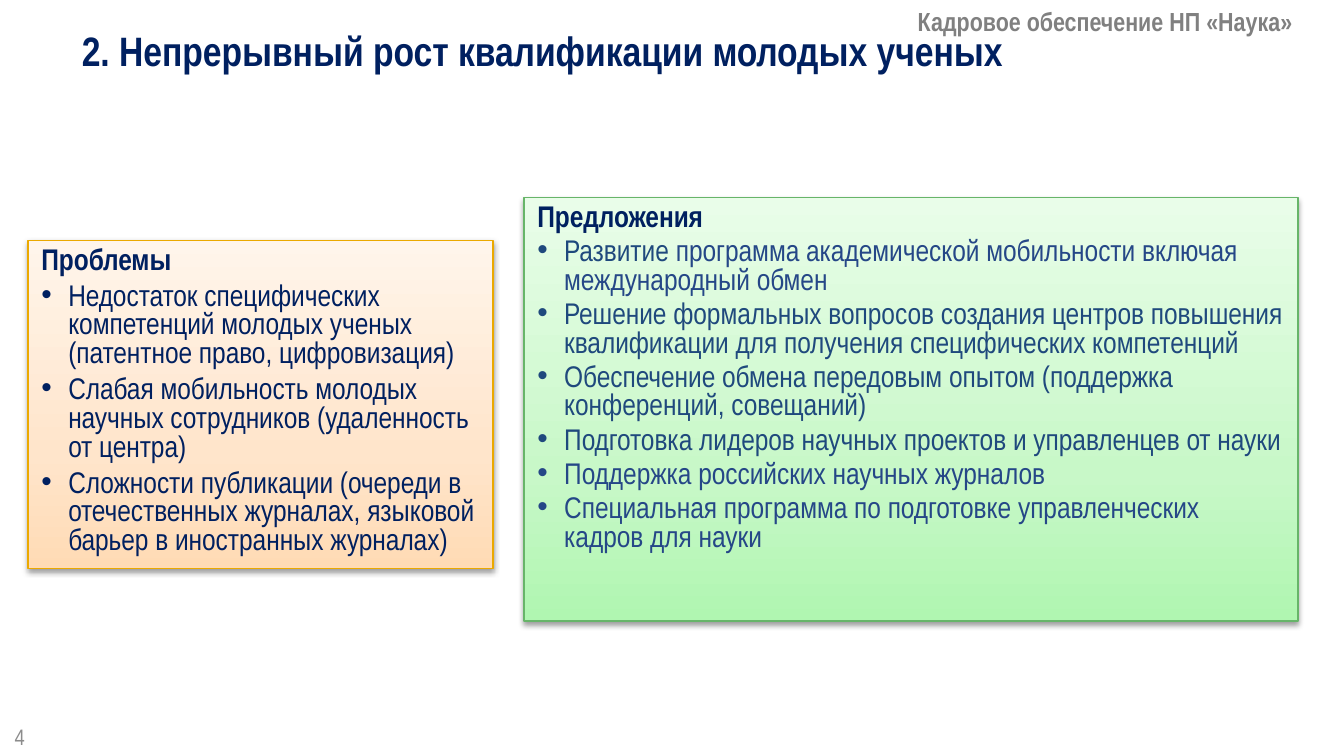
from copy import deepcopy

from lxml import etree
from pptx import Presentation
from pptx import util as u
from pptx.dml.color import RGBColor
from pptx.enum import shapes, text
from pptx.oxml import ns

WIDTH = u.Inches(10)
HEIGHT = WIDTH * 9 // 16
CELL = WIDTH // 100
FONT = "Arial Narrow"
COLORS = {
    "navy": "002060",
    "blue": "1F497D",
    "steel": "254787",
    "header": "808080",
    "number": "8C8C8C",
    "shadow": "000000",
}
ORANGE = {"line": "EBA900", "stops": ["FFDBB5", "FFE5CB", "FFF5EB"]}
GREEN = {"line": "67B569", "stops": ["B0F6B1", "C8F8C8", "E9FDE9"]}
STOP_POSITIONS = [0, 0.35, 1]

PROBLEMS = [
    [("Недостаток специфических компетенций молодых ученых (патентное право, цифровизация)", "navy")],
    [("Слабая мобильность молодых научных сотрудников (удаленность от центра)", "navy")],
    [("Сложности публикации (очереди в отечественных журналах, языковой барьер в иностранных журналах)", "navy")],
]
PROPOSALS = [
    [("Развитие ", "blue"), ("программа академической мобильности включая международный обмен", "steel")],
    [("Решение формальных вопросов создания центров повышения квалификации "
      "для получения специфических компетенций", "blue")],
    [("Обеспечение обмена передовым опытом (поддержка конференций, совещаний)", "blue")],
    [("Подготовка лидеров научных проектов и управленцев от науки", "blue")],
    [("Поддержка российских научных журналов", "steel")],
    [("Специальная программа по подготовке управленческих кадров для науки", "steel")],
]


def grid(column, row, columns, rows):
    return [int(CELL * cells) for cells in (column, row, columns, rows)]


def add_xml(parent, tag, **attributes):
    return etree.SubElement(parent, ns.qn(tag), {key: str(value) for key, value in attributes.items()})


def write(paragraph, runs, size=16, bold=False, bullet=False, spacing=1.0, after=0):
    if bullet:
        properties = paragraph._p.get_or_add_pPr()
        properties.set("marL", str(u.Inches(0.2)))
        properties.set("indent", str(-u.Inches(0.2)))
        add_xml(properties, "a:buFont", typeface="Arial")
        add_xml(properties, "a:buChar", char="•")
    paragraph.alignment = text.PP_ALIGN.LEFT
    paragraph.line_spacing = spacing
    paragraph.space_after = u.Pt(after)
    for words, color in runs:
        run = paragraph.add_run()
        run.text = words
        run.font.name = FONT
        run.font.size = u.Pt(size)
        run.font.bold = bold
        run.font.color.rgb = RGBColor.from_string(COLORS[color])


def add_label(slide, box, words, color, anchor=text.MSO_ANCHOR.TOP, **style):
    frame = slide.shapes.add_textbox(*box).text_frame
    frame.word_wrap = True
    frame.vertical_anchor = anchor
    write(frame.paragraphs[0], [(words, color)], **style)


def paint_panel(panel, palette):
    panel.fill.gradient()
    panel.fill.gradient_angle = 90
    stop_list = panel._element.spPr.find(".//" + ns.qn("a:gsLst"))
    stop_list.append(deepcopy(stop_list[0]))
    for stop, position, color in zip(panel.fill.gradient_stops, STOP_POSITIONS, palette["stops"]):
        stop.position = position
        stop.color.rgb = RGBColor.from_string(color)
    panel.line.color.rgb = RGBColor.from_string(palette["line"])
    panel.line.width = u.Pt(0.75)
    panel.shadow.inherit = False
    effects = panel._element.spPr.find(ns.qn("a:effectLst"))
    shadow = add_xml(effects, "a:outerShdw", blurRad=u.Pt(3.1), dist=u.Pt(1.6),
                     dir=90 * 60000, rotWithShape=0)
    add_xml(add_xml(shadow, "a:srgbClr", val=COLORS["shadow"]), "a:alpha", val=38000)


def add_panel(slide, box, heading, items, palette, after):
    panel = slide.shapes.add_shape(shapes.MSO_SHAPE.RECTANGLE, *box)
    paint_panel(panel, palette)
    frame = panel.text_frame
    frame.word_wrap = True
    frame.vertical_anchor = text.MSO_ANCHOR.TOP
    write(frame.paragraphs[0], [(heading, "navy")], bold=True, spacing=0.8, after=after)
    for runs in items:
        write(frame.add_paragraph(), runs, bullet=True, spacing=0.8, after=after)


def main():
    deck = Presentation()
    deck.slide_width, deck.slide_height = WIDTH, HEIGHT
    slide = deck.slides.add_slide(deck.slide_layouts[6])
    add_label(slide, grid(5.1, 2.1, 93.2, 4),
              "2. Непрерывный рост квалификации молодых ученых", "navy",
              size=22, bold=True, spacing=0.8, after=6)
    add_label(slide, grid(0.1, 53.3, 4.1, 3), "4", "number",
              anchor=text.MSO_ANCHOR.MIDDLE, size=12)
    add_panel(slide, grid(2.1, 17.9, 34.6, 24.4), "Проблемы", PROBLEMS, ORANGE, after=4)
    add_panel(slide, grid(39, 14.7, 57.6, 31.5), "Предложения", PROPOSALS, GREEN, after=3)
    add_label(slide, grid(67.3, 0.3, 32.1, 3),
              "Кадровое обеспечение НП «Наука»", "header",
              size=14, bold=True, spacing=0.85, after=2)
    deck.save("out.pptx")


if __name__ == "__main__":
    main()
